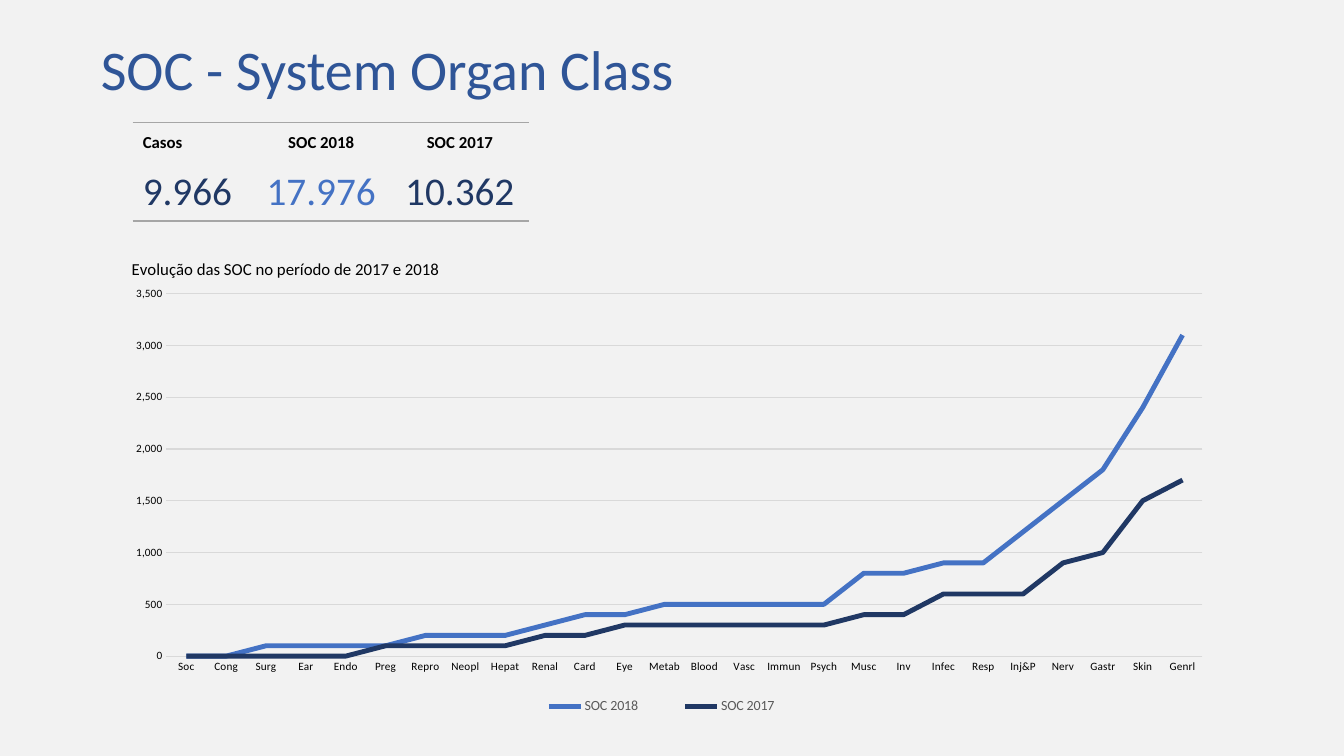
from dataclasses import dataclass
from lxml.etree import SubElement as Sub
from pptx import Presentation
from pptx.chart.data import CategoryChartData as Data
from pptx.dml.color import RGBColor as Rgb
from pptx.enum.chart import XL_CHART_TYPE as Kind, XL_LEGEND_POSITION as Spot, XL_TICK_MARK as Tick
from pptx.enum.text import MSO_ANCHOR as Anchor, MSO_AUTO_SIZE as Auto, PP_ALIGN as Align
from pptx.oxml.ns import qn
from pptx.util import Inches, Pt


@dataclass(frozen=True)
class Theme:
    face: str = "Calibri"
    back: str = "F2F2F2"
    head: str = "2F5597"
    ink: str = "000000"
    blue: str = "4472C4"
    navy: str = "203864"
    rule: str = "A6A6A6"
    grid: str = "D9D9D9"
    soft: str = "595959"
    huge: int = 40
    big: int = 28
    mid: int = 12
    small: int = 10
    tiny: int = 8


class Page:
    cols, rows = 160, 90

    def __init__(self, deck, theme):
        self.theme = theme
        self.dx = deck.slide_width / self.cols
        self.dy = deck.slide_height / self.rows
        self.slide = deck.slides.add_slide(deck.slide_layouts[5])
        fill = self.slide.background.fill
        fill.solid()
        fill.fore_color.rgb = Rgb.from_string(theme.back)

    def box(self, x, y, w, h):
        return [round(n * d) for n, d in zip((x, y, w, h), (self.dx, self.dy) * 2)]

    def font(self, font, size, color, bold=False):
        font.name, font.size, font.bold = self.theme.face, Pt(size), bold
        font.color.rgb = Rgb.from_string(color)

    def title(self, text, *area):
        shape = self.slide.shapes.title
        shape.left, shape.top, shape.width, shape.height = self.box(*area)
        frame = shape.text_frame
        frame.text = text
        frame.auto_size, frame.vertical_anchor = Auto.NONE, Anchor.MIDDLE
        para = frame.paragraphs[0]
        para.alignment, para.line_spacing = Align.LEFT, 0.9
        self.font(para.font, self.theme.huge, self.theme.head)

    def edge(self, cell, lines):
        props = cell._tc.get_or_add_tcPr()
        for side in ("L", "R", "T", "B"):
            line = Sub(props, qn(f"a:ln{side}"), w=str(Pt(1)))
            if side in lines:
                Sub(Sub(line, qn("a:solidFill")), qn("a:srgbClr"), val=self.theme.rule)
            else:
                Sub(line, qn("a:noFill"))

    def table(self, data, x, y, wide, high, inks):
        area = self.box(x, y, sum(wide), sum(high))
        table = self.slide.shapes.add_table(len(high), len(wide), *area).table
        table.first_row = table.horz_banding = False
        for col, w in zip(table.columns, wide):
            col.width = round(w * self.dx)
        for r, (row, h) in enumerate(zip(data, high)):
            table.rows[r].height = round(h * self.dy)
            for c, text in enumerate(row):
                cell = table.cell(r, c)
                cell.text = text
                self.edge(cell, "B" if r else "T")
                cell.fill.background()
                cell.vertical_anchor = Anchor.TOP if r else Anchor.MIDDLE
                para = cell.text_frame.paragraphs[0]
                para.alignment = Align.CENTER if c else Align.LEFT
                if r:
                    self.font(para.font, self.theme.big, inks[c])
                else:
                    self.font(para.font, self.theme.mid, self.theme.ink, True)

    def place(self, part, spot, inner=False, **shares):
        for old in part.findall(qn("c:layout")):
            part.remove(old)
        layout = part.makeelement(qn("c:layout"))
        part.insert(spot, layout)
        manual = Sub(layout, qn("c:manualLayout"))
        if inner:
            Sub(manual, qn("c:layoutTarget"), val="inner")
        for mode in ("xMode", "yMode"):
            Sub(manual, qn(f"c:{mode}"), val="edge")
        for key, share in shares.items():
            Sub(manual, qn(f"c:{key}"), val=str(share))

    def axis(self, axis):
        axis.major_tick_mark = axis.minor_tick_mark = Tick.NONE
        axis.format.line.fill.background()
        self.font(axis.tick_labels.font, self.theme.tiny, self.theme.ink)

    def chart(self, text, cats, series, inks, *area):
        look = self.theme
        data = Data(number_format="#,##0")
        data.categories = cats
        for name, vals in series.items():
            data.add_series(name, vals)
        chart = self.slide.shapes.add_chart(Kind.LINE, *self.box(*area), data).chart
        self.font(chart.font, look.small, look.ink)
        for line, ink in zip(chart.plots[0].series, inks):
            line.smooth = False
            line.format.line.width = Pt(3.5)
            line.format.line.color.rgb = Rgb.from_string(ink)
        chart.plots[0].vary_by_categories = False
        self.axis(chart.category_axis)
        axis = chart.value_axis
        self.axis(axis)
        axis.minimum_scale, axis.maximum_scale, axis.major_unit = 0, 3500, 500
        axis.tick_labels.number_format = "#,##0"
        axis.tick_labels.number_format_is_linked = False
        grid = axis.major_gridlines.format.line
        grid.width, grid.color.rgb = Pt(0.75), Rgb.from_string(look.grid)
        chart.has_title = chart.has_legend = True
        frame = chart.chart_title.text_frame
        frame.text = text
        self.font(frame.paragraphs[0].font, look.mid, look.ink)
        legend = chart.legend
        legend.position, legend.include_in_layout = Spot.BOTTOM, False
        self.font(legend.font, look.small, look.soft)
        root = chart._chartSpace.chart
        self.place(root.find(qn("c:title")), 1, x=0.01, y=0.03)
        self.place(root.plotArea, 0, True, x=0.044, y=0.109, w=0.933, h=0.739)
        self.place(root.find(qn("c:legend")), 1, x=0.35, y=0.92, w=0.28, h=0.06)


def main():
    deck = Presentation()
    deck.slide_width, deck.slide_height = Inches(13.33), Inches(7.5)
    look = Theme()
    page = Page(deck, look)
    page.title("SOC - System Organ Class", 10.8, 4.8, 108.1, 7.6)
    cats = ("Soc Cong Surg Ear Endo Preg Repro Neopl Hepat Renal Card Eye Metab Blood "
            "Vasc Immun Psych Musc Inv Infec Resp Inj&P Nerv Gastr Skin Genrl").split()
    series = {
        "SOC 2018": [0, 0, 100, 100, 100, 100, 200, 200, 200, 300, 400, 400, 500, 500,
                     500, 500, 500, 800, 800, 900, 900, 1200, 1500, 1800, 2400, 3100],
        "SOC 2017": [0, 0, 0, 0, 0, 100, 100, 100, 100, 200, 200, 300, 300, 300,
                     300, 300, 300, 400, 400, 600, 600, 600, 900, 1000, 1500, 1700],
    }
    page.chart("Evolução das SOC no período de 2017 e 2018", cats, series,
               (look.blue, look.navy), 14, 28.6, 132.2, 58.4)
    page.table([["Casos", *series], ["9.966", "17.976", "10.362"]], 15.8, 14.6,
               (14.2, 16.5, 16.5), (4.8, 6.8), (look.navy, look.blue, look.navy))
    deck.save("out.pptx")


if __name__ == "__main__":
    main()
